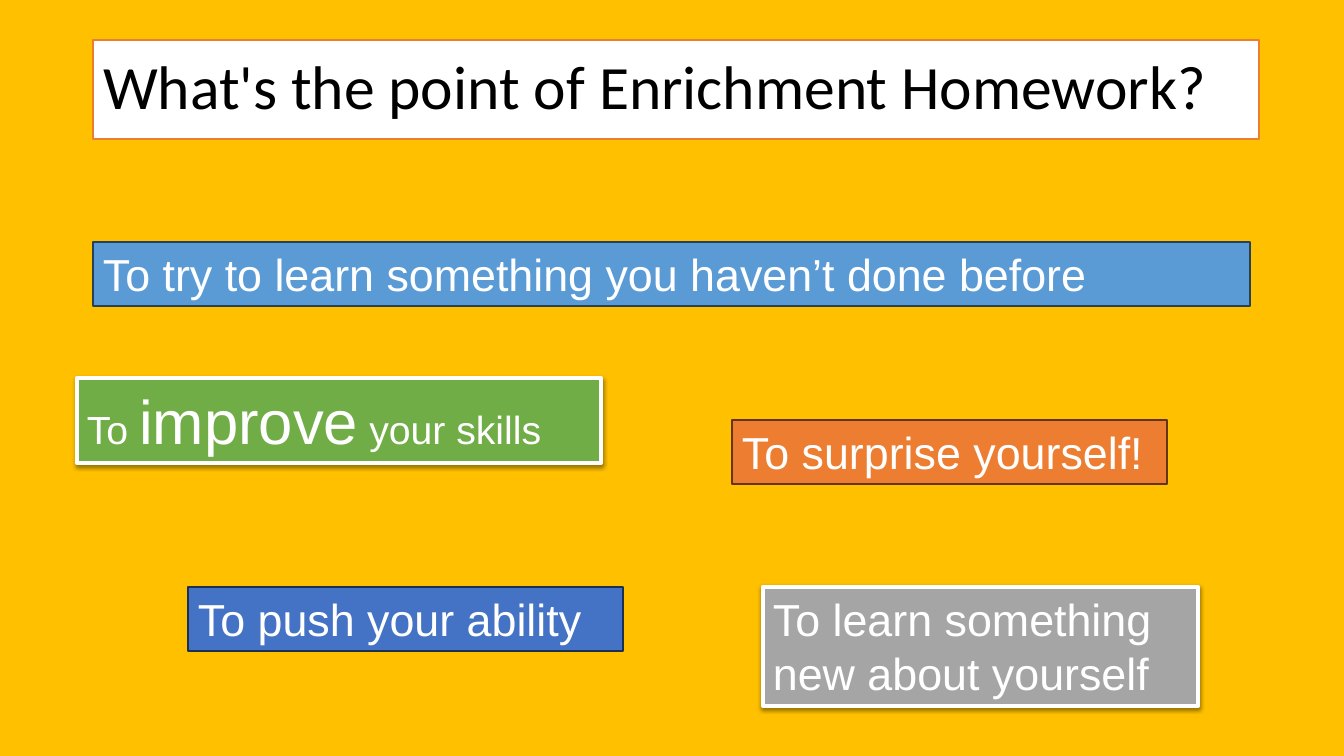
from lxml.etree import SubElement
from pptx import Presentation
from pptx.dml.color import RGBColor
from pptx.enum.text import MSO_ANCHOR, MSO_AUTO_SIZE, PP_ALIGN
from pptx.oxml.ns import qn
from pptx.util import Emu, Pt

PX = 914400 / 100.8


def px(length):
    return Emu(round(length * PX))


def color(value):
    return RGBColor.from_string(value)


def write(para, text, font="Arial", size=32, fill="FFFFFF"):
    span = para.add_run()
    span.text = text
    span.font.name = font
    span.font.size = Pt(size)
    span.font.color.rgb = color(fill)


class Page:
    """Hold the slide and its style, and add each kind of element."""

    def __init__(self, deck, background):
        self.slide = deck.slides.add_slide(deck.slide_layouts[5])
        self.slide.background.fill.solid()
        self.slide.background.fill.fore_color.rgb = color(background)

    def dress(self, box, fill, line, width):
        box.fill.solid()
        box.fill.fore_color.rgb = color(fill)
        box.line.color.rgb = color(line)
        box.line.width = Pt(width)
        box.text_frame.word_wrap = True

    def title(self, text, left, top, width, height):
        box = self.slide.shapes.title
        box.left, box.top, box.width, box.height = map(px, (left, top, width, height))
        self.dress(box, "FFFFFF", "ED7D31", 1)
        box.text_frame.auto_size = MSO_AUTO_SIZE.NONE
        box.text_frame.vertical_anchor = MSO_ANCHOR.MIDDLE
        para = box.text_frame.paragraphs[0]
        para.alignment = PP_ALIGN.LEFT
        para.line_spacing = 0.9
        write(para, text, font="Calibri", size=44, fill="000000")

    def reason(self, spans, left, top, width, height, fill, line):
        raised = line == "FFFFFF"
        box = self.slide.shapes.add_textbox(*map(px, (left, top, width, height)))
        self.dress(box, fill, line, 3 if raised else 2)
        box.text_frame.auto_size = MSO_AUTO_SIZE.SHAPE_TO_FIT_TEXT
        for text, size in spans:
            write(box.text_frame.paragraphs[0], text, size=size)
        if raised:
            self.shadow(box)

    def shadow(self, box):
        effects = SubElement(box._element.spPr, qn("a:effectLst"))
        outer = SubElement(effects, qn("a:outerShdw"), blurRad=str(Pt(3.1)),
                           dist=str(Pt(1.6)), dir="5400000", rotWithShape="0")
        shade = SubElement(outer, qn("a:srgbClr"), val="000000")
        SubElement(shade, qn("a:alpha"), val="38000")


def main():
    deck = Presentation()
    deck.slide_width, deck.slide_height = px(1344), px(756)
    page = Page(deck, "FFC000")
    page.title("What's the point of Enrichment Homework?", 93, 40, 1166, 99)
    reasons = [
        ([("To try to learn something you haven’t done before", 32)],
         93, 242, 1157, 64, "5B9BD5", "264159"),
        ([("To ", 28), ("improve", 44), (" your skills", 28)],
         77, 378, 524, 85, "70AD47", "FFFFFF"),
        ([("To push your ability", 32)], 188, 587, 435, 64, "4472C4", "1C3052"),
        ([("To surprise yourself!", 32)], 732, 420, 435, 64, "ED7D31", "643414"),
        ([("To learn something new about yourself", 32)],
         763, 587, 435, 119, "A5A5A5", "FFFFFF"),
    ]
    for reason in reasons:
        page.reason(*reason)
    deck.save("out.pptx")


if __name__ == "__main__":
    main()
